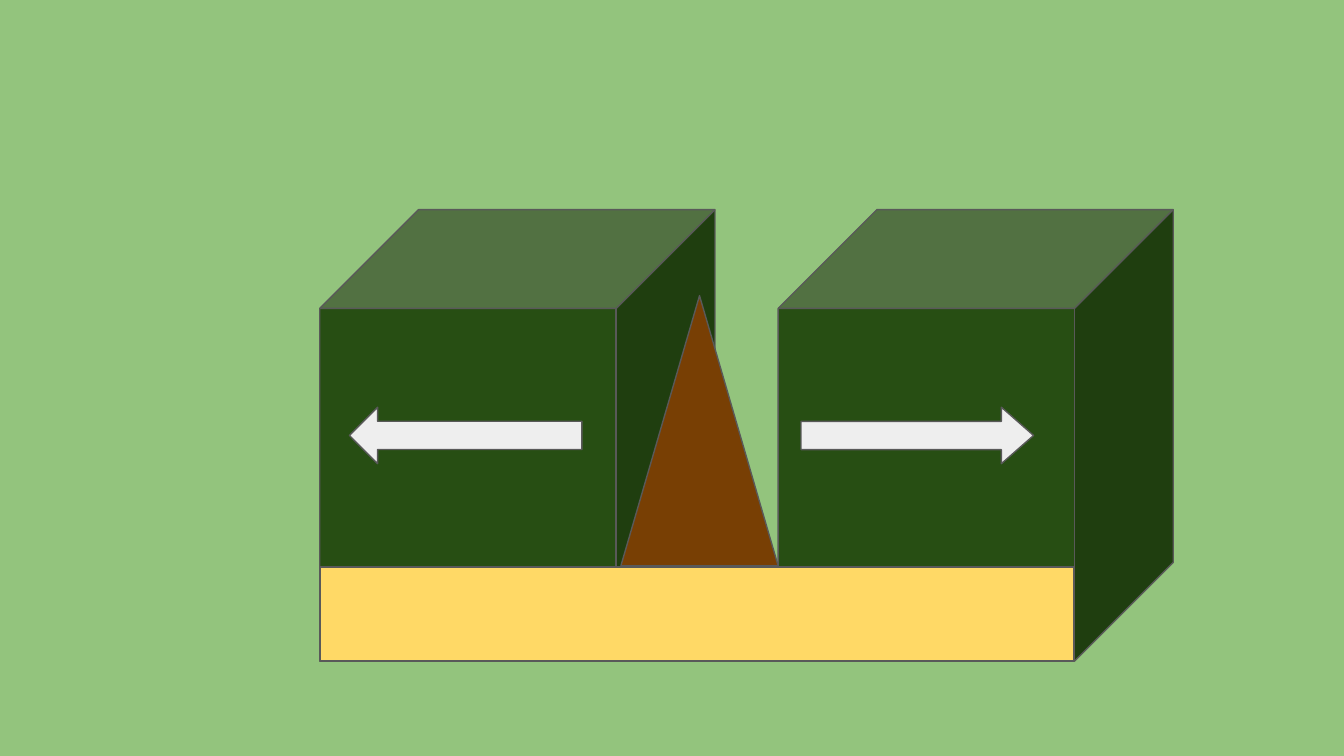
from pptx import Presentation
from pptx.dml.color import RGBColor
from pptx.enum.shapes import MSO_SHAPE as SHAPE
from pptx.util import Inches, Pt

BACKGROUND = RGBColor(0x93, 0xC4, 0x7D)
PLATE_GREEN = RGBColor(0x27, 0x4E, 0x13)
ARROW_GREY = RGBColor(0xEE, 0xEE, 0xEE)
MANTLE_YELLOW = RGBColor(0xFF, 0xD9, 0x66)
MAGMA_BROWN = RGBColor(0x78, 0x3F, 0x04)
OUTLINE = RGBColor(0x59, 0x59, 0x59)

prs = Presentation()
prs.slide_width = Inches(10)
prs.slide_height = Inches(10) * 9 // 16
slide = prs.slides.add_slide(prs.slide_layouts[6])
slide.background.fill.solid()
slide.background.fill.fore_color.rgb = BACKGROUND


def add_part(kind, left, top, width, height, color):
    part = slide.shapes.add_shape(
        kind, Inches(left), Inches(top), Inches(width), Inches(height))
    part.shadow.inherit = False
    part.fill.solid()
    part.fill.fore_color.rgb = color
    part.line.color.rgb = OUTLINE
    part.line.width = Pt(0.75)
    return part


# Two plates moving apart
for plate_left in (2.38, 5.79):
    plate = add_part(SHAPE.CUBE, plate_left, 1.56, 2.94, 3.36, PLATE_GREEN)
    plate.adjustments[0] = 0.25

for arrow_left, rotation, head_length in ((2.6, 0, 0.5), (5.96, 180, 0.57)):
    arrow = add_part(SHAPE.LEFT_ARROW, arrow_left, 3.03, 1.73, 0.42, ARROW_GREY)
    arrow.rotation = rotation
    arrow.adjustments[1] = head_length

# Mantle below, with magma rising through the gap
add_part(SHAPE.FLOWCHART_PROCESS, 2.38, 4.22, 5.61, 0.7, MANTLE_YELLOW)
add_part(SHAPE.ISOSCELES_TRIANGLE, 4.62, 2.2, 1.17, 2.01, MAGMA_BROWN)

prs.save("out.pptx")
